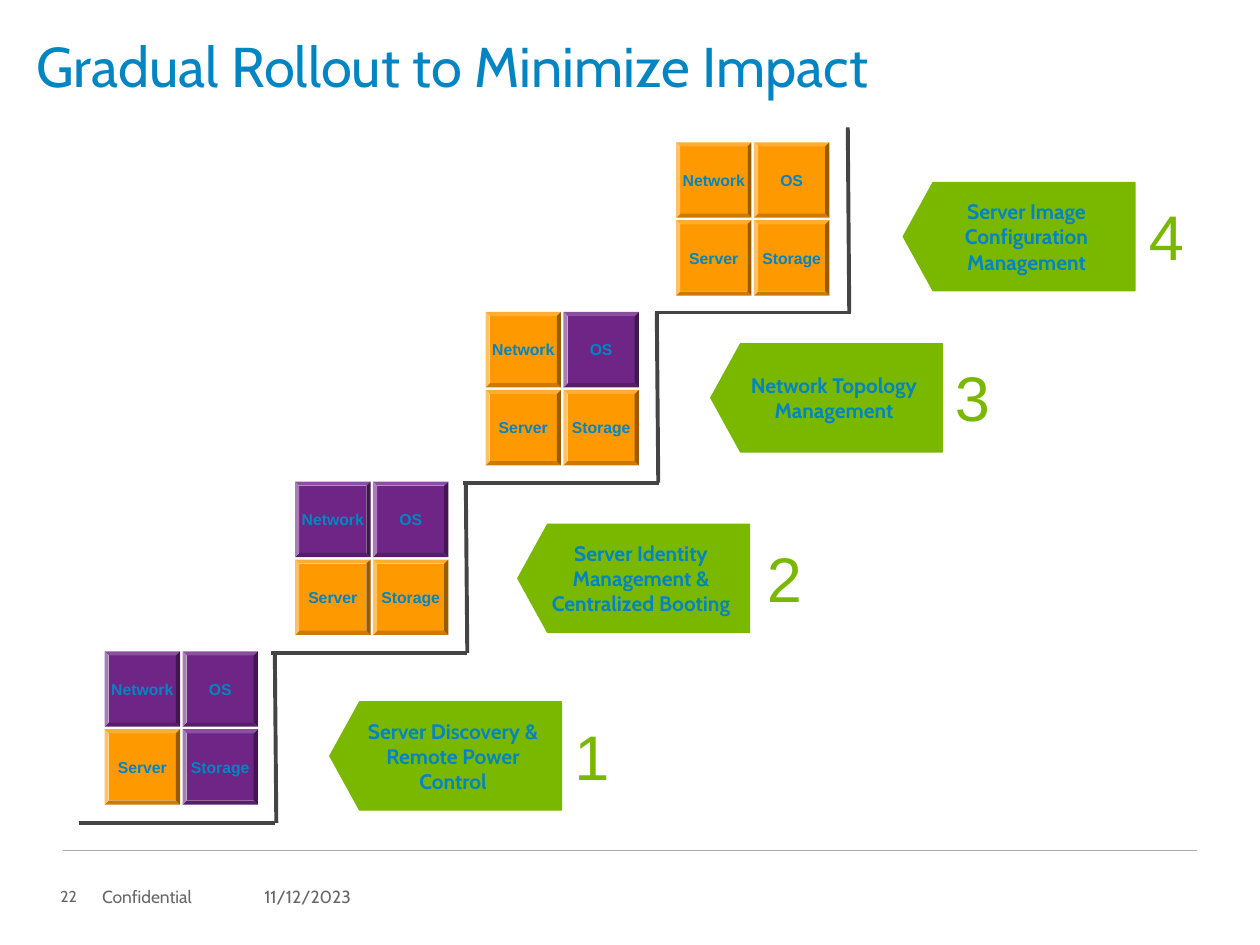
import pptx
import pptx.dml.color
import pptx.enum.shapes
import pptx.enum.text
import pptx.oxml
import pptx.oxml.ns
import pptx.util

Cm = pptx.util.Cm
Pt = pptx.util.Pt
RGBColor = pptx.dml.color.RGBColor
Shape = pptx.enum.shapes.MSO_SHAPE
Align = pptx.enum.text.PP_ALIGN
Anchor = pptx.enum.text.MSO_ANCHOR
AutoSize = pptx.enum.text.MSO_AUTO_SIZE

BLUE = RGBColor(0x00, 0x85, 0xC3)
GREEN = RGBColor(0x7A, 0xB8, 0x00)
ORANGE = RGBColor(0xFF, 0x99, 0x00)
PURPLE = RGBColor(0x6E, 0x25, 0x85)
DARK_GRAY = RGBColor(0x44, 0x44, 0x44)
TEXT_GRAY = RGBColor(0x66, 0x66, 0x66)
RULE_GRAY = RGBColor(0xAA, 0xAA, 0xAA)

# Column and row of each tile in its two by two block
TILES = {"Server": (0, 1), "Network": (0, 0), "Storage": (1, 1), "OS": (1, 0)}

# Tiles already managed (orange) at each step, from the bottom up
MANAGED = [
    {"Server"},
    {"Server", "Storage"},
    {"Server", "Storage", "Network"},
    {"Server", "Storage", "Network", "OS"},
]

# Text, left, top, left of the number
CALLOUTS = [
    ("Server Discovery & Remote Power Control", 6.65, 14.15, 11.33),
    ("Server Identity Management & Centralized Booting", 10.44, 10.57, 15.21),
    ("Network Topology Management", 14.33, 6.93, 19.0),
    ("Server Image Configuration Management", 18.21, 3.68, 22.91),
]


def write_text(frame, text, size=10, font="Cabin", color=TEXT_GRAY, bold=False,
               align=Align.LEFT, anchor=Anchor.MIDDLE, wrap=True,
               auto_size=AutoSize.NONE, line_spacing=None):
    frame.auto_size = auto_size
    frame.word_wrap = wrap
    frame.vertical_anchor = anchor
    paragraph = frame.paragraphs[0]
    paragraph.alignment = align
    if line_spacing:
        paragraph.line_spacing = line_spacing
    run = paragraph.add_run()
    run.text = text
    run.font.name = font
    run.font.size = Pt(size)
    run.font.bold = bold
    run.font.color.rgb = color


class SlideBuilder:
    body_font = "Cabin"
    label_font = "Arial"
    tile_size = 1.52
    tile_pitch = 1.57

    def __init__(self, presentation):
        self.slide = presentation.slides.add_slide(presentation.slide_layouts[5])

    def title(self, text):
        title = self.slide.shapes.title
        title.left, title.top, title.width, title.height = (
            Cm(0.48), Cm(0.43), Cm(22.86), Cm(2.03))
        write_text(title.text_frame, text, size=32, font=self.body_font,
                   color=BLUE, line_spacing=0.8)

    def line(self, start, end, color=DARK_GRAY, width=2.25):
        connector = self.slide.shapes.add_connector(
            pptx.enum.shapes.MSO_CONNECTOR.STRAIGHT,
            Cm(start[0]), Cm(start[1]), Cm(end[0]), Cm(end[1]))
        connector.line.color.rgb = color
        connector.line.width = Pt(width)
        properties = connector._element.spPr
        properties.append(pptx.oxml.parse_xml(
            "<a:effectLst %s/>" % pptx.oxml.ns.nsdecls("a")))

    def shape(self, shapes, kind, left, top, width, height, fill, adjustment):
        shape = shapes.add_shape(kind, Cm(left), Cm(top), Cm(width), Cm(height))
        shape.shadow.inherit = False
        shape.adjustments[0] = adjustment
        shape.fill.solid()
        shape.fill.fore_color.rgb = fill
        return shape

    def tile_block(self, left, top, managed):
        for label, (column, row) in TILES.items():
            tile = self.shape(
                self.slide.shapes, Shape.BEVEL,
                left + column * self.tile_pitch, top + row * self.tile_pitch,
                self.tile_size, self.tile_size,
                ORANGE if label in managed else PURPLE, 0.055)
            tile.line.fill.background()
            write_text(tile.text_frame, label, size=9, font=self.label_font,
                       color=BLUE, bold=True, align=Align.CENTER, wrap=False)

    def callout(self, number, text, left, top, number_left):
        """Add a left-pointing arrow grouped with its step number."""
        shapes = self.slide.shapes.add_group_shape().shapes
        arrow = self.shape(shapes, Shape.PENTAGON, left, top, 4.67, 2.18, GREEN, 0.275)
        arrow._element.spPr.xfrm.set("flipH", "1")
        arrow.line.color.rgb = GREEN
        arrow.line.width = Pt(0.75)
        write_text(arrow.text_frame, text, size=12, font=self.body_font,
                   color=BLUE, bold=True, align=Align.CENTER)
        box = shapes.add_textbox(Cm(number_left), Cm(top + 0.18), Cm(1.22), Cm(1.78))
        write_text(box.text_frame, str(number), size=36, font=self.label_font,
                   color=GREEN, anchor=Anchor.TOP, wrap=False,
                   auto_size=AutoSize.SHAPE_TO_FIT_TEXT)

    def footer(self, text, left, width, size=10, inset=0):
        box = self.slide.shapes.add_textbox(Cm(left), Cm(17.86), Cm(width), Cm(0.43))
        frame = box.text_frame
        frame.margin_left = Cm(inset)
        frame.margin_top = frame.margin_bottom = 0
        write_text(frame, text, size=size, font=self.body_font)


def main():
    presentation = pptx.Presentation()
    presentation.slide_width = Cm(25.4)
    presentation.slide_height = Cm(19.05)
    builder = SlideBuilder(presentation)

    builder.line((1.27, 17.15), (24.13, 17.15), color=RULE_GRAY, width=0.75)
    builder.title("Gradual Rollout to Minimize Impact")

    step_rise = 3.43
    for step, managed in enumerate(MANAGED):
        tread_left = 1.6 + 3.87 * step
        tread_top = 16.59 - step_rise * step
        riser_left = 5.54 + 3.85 * step
        riser_top = 2.57 if step == len(MANAGED) - 1 else tread_top - step_rise
        builder.line((tread_left, tread_top), (tread_left + 3.94, tread_top))
        builder.line((riser_left, riser_top), (riser_left + 0.03, tread_top))
        builder.tile_block(2.11 + 3.84 * step, 13.13 - 3.42 * step, managed)

    for number, callout in enumerate(CALLOUTS, start=1):
        builder.callout(number, *callout)

    builder.footer("11/12/2023", 5.08, 2.54, inset=0.25)
    builder.footer("Confidential", 2.06, 5.23)
    builder.footer("22", 1.22, 0.71, size=9)
    presentation.save("out.pptx")


if __name__ == "__main__":
    main()
